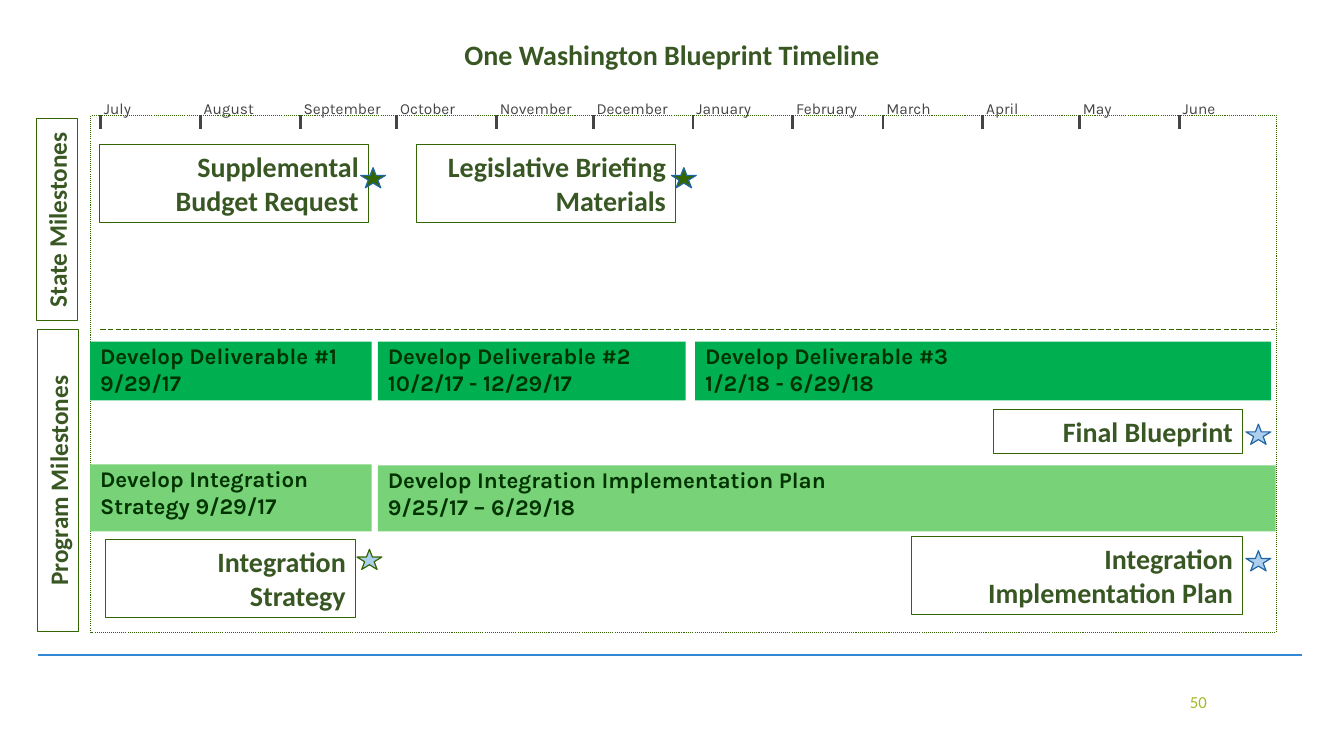
from itertools import accumulate

from lxml.etree import SubElement
from pptx import Presentation
from pptx.dml.color import RGBColor
from pptx.enum.dml import MSO_LINE as Dash
from pptx.enum.shapes import MSO_CONNECTOR, MSO_SHAPE as Preset
from pptx.enum.text import MSO_ANCHOR as Anchor, PP_ALIGN as Align
from pptx.oxml.ns import qn
from pptx.util import Pt

COLORS = {
    "white": "FFFFFF",
    "border": "336600",
    "heading": "385723",
    "month": "444444",
    "bar_text": "003300",
    "deliverable": "00B050",
    "integration": "78D278",
    "state_star": "336600",
    "program_star": "ADCFEE",
    "star_edge": "2266A4",
    "footer_rule": "3388D5",
    "page": "A6B727",
}
BOX_INSETS = (7.2, 3.6, 7.2, 3.6)
BAR_INSETS = (7.2, 0.7, 0.7, 0.7)


class TimelineSlide:
    def __init__(self, presentation):
        self.slide = presentation.slides.add_slide(presentation.slide_layouts[5])
        self.shapes = self.slide.shapes

    def color(self, name):
        return RGBColor.from_string(COLORS[name])

    def set_text(self, shape, text, size, color, font="Calibri", bold=True,
                 align=Align.LEFT, insets=BOX_INSETS, wrap=True):
        frame = shape.text_frame
        frame.word_wrap = wrap
        frame.vertical_anchor = Anchor.TOP
        (frame.margin_left, frame.margin_top,
         frame.margin_right, frame.margin_bottom) = map(Pt, insets)
        paragraph = frame.paragraphs[0]
        paragraph.alignment = align
        for number, line in enumerate(text.split("\n")):
            if number:
                paragraph.add_line_break()
            run = paragraph.add_run()
            run.text = line
            run.font.name = font
            run.font.size = Pt(size)
            run.font.bold = bold
            run.font.color.rgb = self.color(color)

    def title(self, text, *place):
        heading = self.shapes.title
        heading.left, heading.top, heading.width, heading.height = map(Pt, place)
        self.set_text(heading, text, 20, "heading", align=Align.CENTER)

    def label(self, text, place, size, color, **style):
        self.set_text(self.shapes.add_textbox(*map(Pt, place)), text, size, color, **style)

    def shape(self, preset, place, fill=None, line=None, weight=0.75, dash=None):
        shape = self.shapes.add_shape(preset, *map(Pt, place))
        shape.shadow.inherit = False
        if fill:
            shape.fill.solid()
            shape.fill.fore_color.rgb = self.color(fill)
        else:
            shape.fill.background()
        if line:
            shape.line.color.rgb = self.color(line)
            shape.line.width = Pt(weight)
            if dash:
                shape.line.dash_style = dash
        else:
            shape.line.fill.background()
        return shape

    def rule(self, ends, color, weight, dash=None):
        rule = self.shapes.add_connector(MSO_CONNECTOR.STRAIGHT, *map(Pt, ends))
        rule.line.color.rgb = self.color(color)
        rule.line.width = Pt(weight)
        if dash:
            rule.line.dash_style = dash
        SubElement(rule._element.spPr, qn("a:effectLst"))

    def bar(self, text, place, fill):
        bar = self.shape(Preset.RECTANGLE, place, fill)
        self.set_text(bar, text, 16, "bar_text", font="Karla", insets=BAR_INSETS)

    def milestone(self, text, place):
        box = self.shape(Preset.RECTANGLE, place, line="border")
        self.set_text(box, text, 20, "heading", align=Align.RIGHT)

    def star(self, left, top, fill, edge="star_edge"):
        self.shape(Preset.STAR_5_POINT, (left, top, 17.8, 14.4), fill, edge, 0.85)

    def lane(self, text, center_x, center_y, length):
        depth = 29
        place = (center_x - length / 2, center_y - depth / 2, length, depth)
        lane = self.shape(Preset.RECTANGLE, place, line="border")
        lane.rotation = 270
        self.set_text(lane, text, 18, "heading", align=Align.CENTER)


def main():
    presentation = Presentation()
    presentation.slide_width = Pt(960)
    presentation.slide_height = Pt(540)
    timeline = TimelineSlide(presentation)

    timeline.rule((27.4, 468, 930.2, 468), "footer_rule", 1.5)
    timeline.shape(Preset.RECTANGLE, (65, 82.4, 846.7, 369.2),
                   "white", "border", 0, Dash.ROUND_DOT)

    months = ("July", "August", "September", "October", "November", "December",
              "January", "February", "March", "April", "May", "June")
    month_days = (31, 31, 30, 31, 30, 31, 31, 28, 31, 30, 31)
    points_per_day = 2.3
    for month, day in zip(months, accumulate(month_days, initial=0)):
        start = 71.8 + day * points_per_day
        timeline.label(month, (start, 70.6, 70, 20.5), 11, "month", font="Karla",
                       bold=False, insets=(2.4, 0, 0, 0), wrap=False)
        timeline.rule((start, 82.4, start, 91.8), "month", 0)

    bars = (
        ("Develop Deliverable #1\n9/29/17", (64.4, 244, 201, 42), "deliverable"),
        ("Develop Deliverable #2\n10/2/17 - 12/29/17", (270, 244, 219.8, 42), "deliverable"),
        ("Develop Deliverable #3\n1/2/18 - 6/29/18", (496.6, 244, 411.2, 42), "deliverable"),
        ("Develop Integration Strategy 9/29/17", (64.4, 331.8, 201, 47.8), "integration"),
        ("Develop Integration Implementation Plan\n9/25/17 – 6/29/18",
         (270, 332.4, 641.2, 47.2), "integration"),
    )
    for bar in bars:
        timeline.bar(*bar)

    milestones = (
        ("Supplemental Budget Request", (71, 103.2, 192.4, 55.7)),
        ("Legislative Briefing Materials", (297.2, 103.2, 185.6, 55.7)),
        ("Final Blueprint", (709.6, 292.7, 178.2, 31.5)),
        ("Integration Implementation Plan", (651, 383.2, 236.8, 55.7)),
        ("Integration Strategy", (75.5, 385.6, 178.7, 55.7)),
    )
    for milestone in milestones:
        timeline.milestone(*milestone)

    timeline.star(257.6, 119.8, "state_star")
    timeline.star(479.6, 119.8, "state_star")
    timeline.star(890, 303, "program_star")
    timeline.star(890, 393.4, "program_star")
    timeline.star(255, 392.4, "program_star", "border")

    timeline.title("One Washington Blueprint Timeline", 0, 23.3, 960, 31.5)
    timeline.lane("State Milestones", 40.8, 157, 144.5)
    timeline.lane("Program Milestones", 41.6, 343.4, 216)
    timeline.rule((71.4, 235.6, 911, 235.6), "border", 0.5, Dash.LONG_DASH)
    timeline.label("50", (734.4, 490.3, 134.8, 28.8), 12, "page",
                   bold=False, align=Align.RIGHT)

    presentation.save("out.pptx")


if __name__ == "__main__":
    main()
